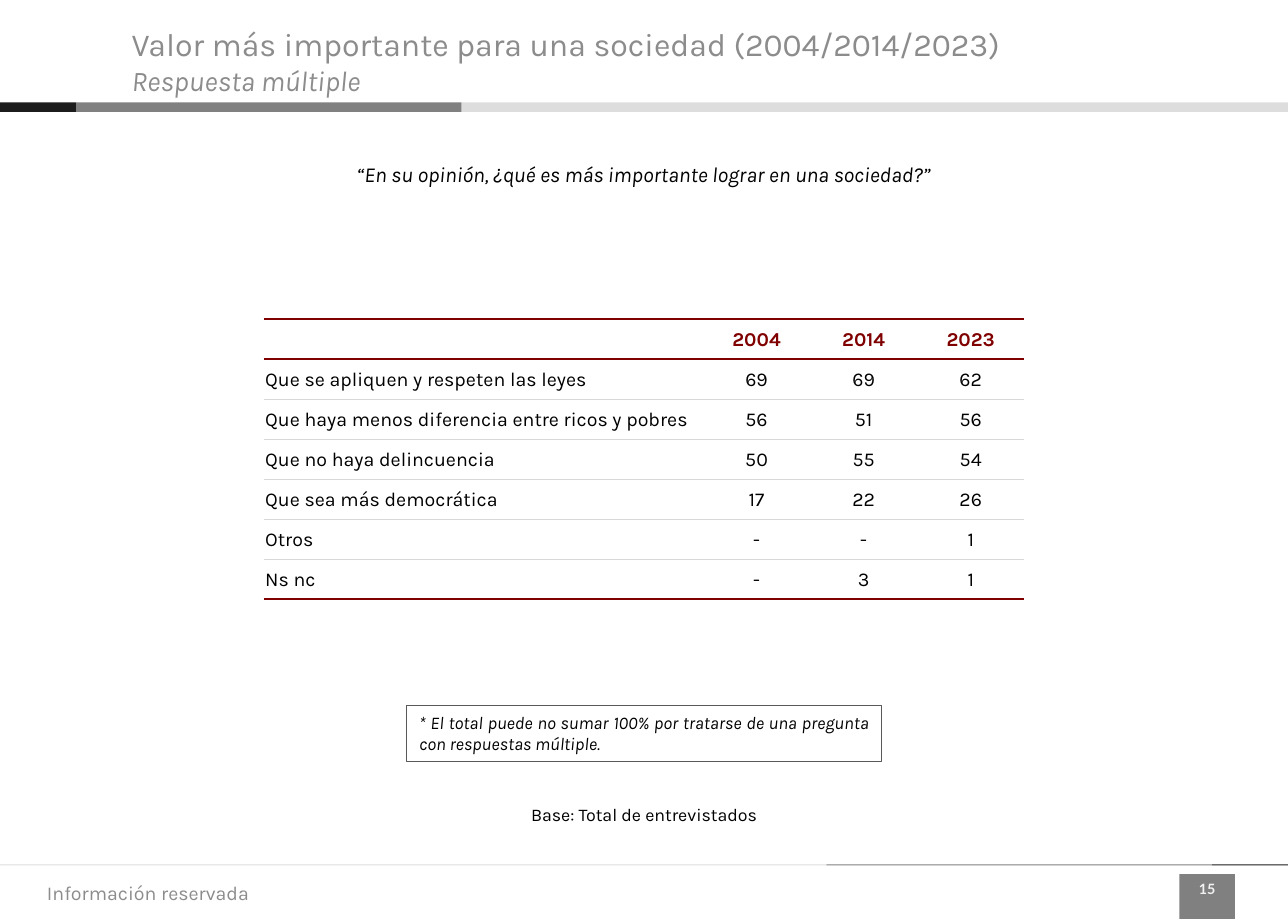
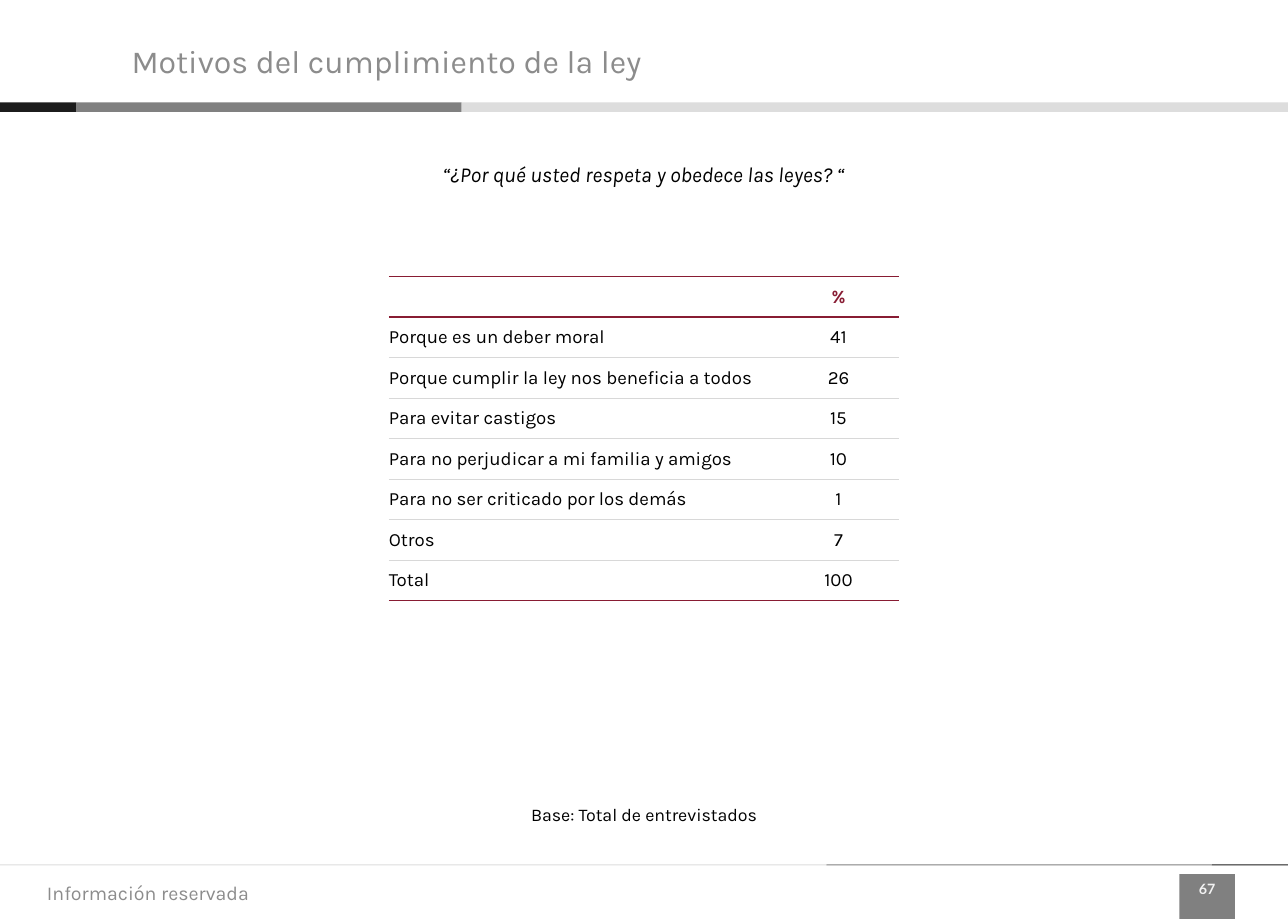
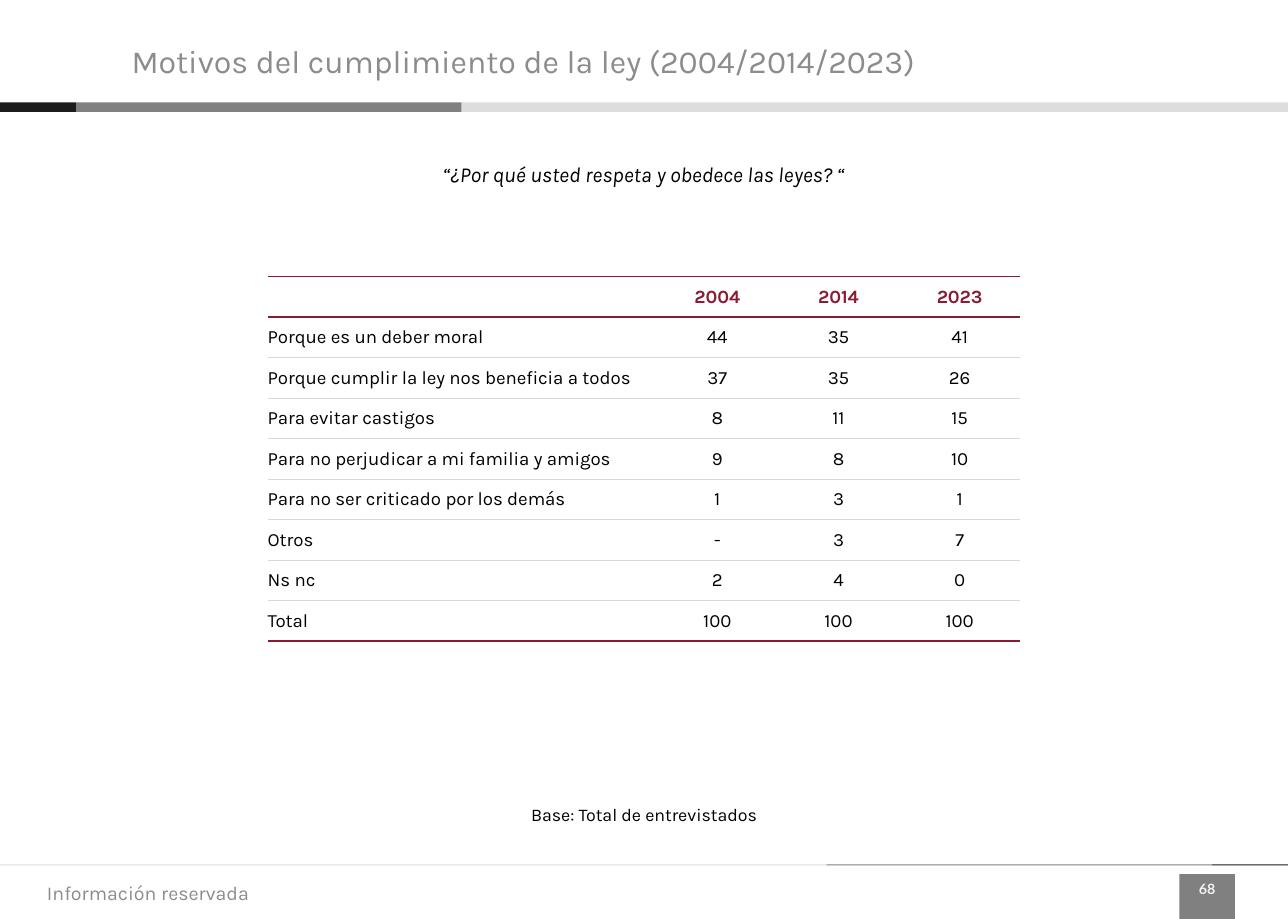
from lxml.etree import SubElement
from pptx import Presentation
from pptx.dml.color import RGBColor
from pptx.enum.shapes import MSO_SHAPE
from pptx.enum.text import MSO_ANCHOR, MSO_AUTO_SIZE, PP_ALIGN
from pptx.oxml.ns import qn
from pptx.util import Cm, Pt

INK = {
    "black": "000000", "dark": "1C1C1C", "mid": "808080", "pale": "DDDDDD",
    "title": "8C8C8C", "page": "F2F2F2", "frame": "595959", "rule": "D8D8D8",
    "red": "800000", "wine": "881C33",
}
WIDE, HIGH = 25.5, 18.2
BANDS = [(1.51, "dark"), (7.63, "mid"), (16.36, "pale")]

PAGES = [
    {
        "page": "15",
        "title": ["Valor más importante para una sociedad (2004/2014/2023)",
                  "Respuesta múltiple"],
        "ask": "“En su opinión, ¿qué es más importante lograr en una sociedad?”",
        "note": "* El total puede no sumar 100% por tratarse de una pregunta "
                "con respuestas múltiple.",
        "top": 6.32, "cols": (8.7, 2.12), "tall": 5.55,
        "size": 11, "tone": "red", "pad": 0.03,
        "rows": [
            ["", "2004", "2014", "2023"],
            ["Que se apliquen y respeten las leyes", "69", "69", "62"],
            ["Que haya menos diferencia entre ricos y pobres", "56", "51", "56"],
            ["Que no haya delincuencia", "50", "55", "54"],
            ["Que sea más democrática", "17", "22", "26"],
            ["Otros", "-", "-", "1"],
            ["Ns nc", "-", "3", "1"],
        ],
    },
    {
        "page": "67",
        "title": ["Motivos del cumplimiento de la ley"],
        "ask": "“¿Por qué usted respeta y obedece las leyes? “",
        "top": 5.48, "cols": (7.7, 2.4), "tall": 6.42,
        "size": 10.5, "tone": "wine", "pad": 0,
        "rows": [
            ["", "%"],
            ["Porque es un deber moral", "41"],
            ["Porque cumplir la ley nos beneficia a todos", "26"],
            ["Para evitar castigos", "15"],
            ["Para no perjudicar a mi familia y amigos", "10"],
            ["Para no ser criticado por los demás", "1"],
            ["Otros", "7"],
            ["Total", "100"],
        ],
    },
    {
        "page": "68",
        "title": ["Motivos del cumplimiento de la ley (2004/2014/2023)"],
        "ask": "“¿Por qué usted respeta y obedece las leyes? “",
        "top": 5.48, "cols": (7.7, 2.4), "tall": 7.22,
        "size": 10.5, "tone": "wine", "pad": 0,
        "rows": [
            ["", "2004", "2014", "2023"],
            ["Porque es un deber moral", "44", "35", "41"],
            ["Porque cumplir la ley nos beneficia a todos", "37", "35", "26"],
            ["Para evitar castigos", "8", "11", "15"],
            ["Para no perjudicar a mi familia y amigos", "9", "8", "10"],
            ["Para no ser criticado por los demás", "1", "3", "1"],
            ["Otros", "-", "3", "7"],
            ["Ns nc", "2", "4", "0"],
            ["Total", "100", "100", "100"],
        ],
    },
]


def write(para, text, size, tone="black", align=PP_ALIGN.CENTER,
          bold=False, italic=False, face="Karla"):
    """Fill one paragraph and set its font."""
    para.text = text
    para.alignment = align
    font = para.font
    font.name, font.size, font.bold, font.italic = face, Pt(size), bold, italic
    font.color.rgb = RGBColor.from_string(INK[tone])


def panel(slide, x, y, w, h, fill=None, line=None):
    """Add a rectangle, lengths in cm; without fill or line it only holds text."""
    shape = slide.shapes.add_shape(MSO_SHAPE.RECTANGLE, Cm(x), Cm(y), Cm(w), Cm(h))
    shape.shadow.inherit = False
    if fill:
        shape.fill.solid()
        shape.fill.fore_color.rgb = RGBColor.from_string(INK[fill])
    else:
        shape.fill.background()
    if line:
        shape.line.color.rgb = RGBColor.from_string(INK[line])
        shape.line.width = Pt(0.75)
    else:
        shape.line.fill.background()
    shape.text_frame.word_wrap = True
    shape.text_frame.vertical_anchor = MSO_ANCHOR.TOP
    return shape


deck = Presentation()
deck.slide_width, deck.slide_height = Cm(WIDE), Cm(HIGH)

for data in PAGES:
    slide = deck.slides.add_slide(deck.slide_layouts[5])

    # Bands, footer and page number
    x = 0
    for w, tone in BANDS:
        panel(slide, x, 2.03, w, 0.19, tone)
        panel(slide, WIDE - x - w, 17.12, w, 0.02, tone)
        x += w
    badge = panel(slide, 23.35, 17.31, 1.1, HIGH - 17.31, "mid")
    write(badge.text_frame.paragraphs[0], data["page"], 8, "page",
          bold=True, face="Lato")
    foot = slide.shapes.add_textbox(Cm(0.68), Cm(17.19), Cm(5.94), Cm(0.96))
    foot.text_frame.word_wrap = True
    foot.text_frame.vertical_anchor = MSO_ANCHOR.MIDDLE
    write(foot.text_frame.paragraphs[0], "Información reservada", 11, "title",
          PP_ALIGN.LEFT)

    # Title
    title = slide.shapes.title
    title.left, title.top = Cm(2.35), Cm(0.5)
    title.width, title.height = Cm(20), Cm(1.4)
    frame = title.text_frame
    frame.auto_size = MSO_AUTO_SIZE.NONE
    frame.vertical_anchor = MSO_ANCHOR.MIDDLE
    for i, text in enumerate(data["title"]):
        para = frame.add_paragraph() if i else frame.paragraphs[0]
        write(para, text, 16 if i else 18, "title", PP_ALIGN.LEFT, italic=i > 0)

    # Question and base, centred on the slide
    for text, y, w, h, size in ((data["ask"], 3.07, 19, 0.77, 12),
                                ("Base: Total de entrevistados", 15.79, 5.3, 0.7, 10)):
        label = slide.shapes.add_textbox(Cm((WIDE - w) / 2), Cm(y), Cm(w), Cm(h))
        label.text_frame.word_wrap = True
        write(label.text_frame.paragraphs[0], text, size, italic=size == 12)

    # Table
    rows = data["rows"]
    count = len(rows)
    first, rest = data["cols"]
    wide = first + rest * (len(rows[0]) - 1)
    table = slide.shapes.add_table(
        count, len(rows[0]), Cm((WIDE - wide) / 2), Cm(data["top"]),
        Cm(wide), Cm(data["tall"])).table
    table.first_row = table.horz_banding = False
    for c, col in enumerate(table.columns):
        col.width = Cm(rest if c else first)
    for r, row in enumerate(rows):
        for c, text in enumerate(row):
            cell = table.cell(r, c)
            cell.margin_left = cell.margin_right = cell.margin_top = Cm(data["pad"])
            cell.margin_bottom = 0
            cell.vertical_anchor = MSO_ANCHOR.MIDDLE
            write(cell.text_frame.paragraphs[0], text, data["size"],
                  "black" if r else data["tone"],
                  PP_ALIGN.CENTER if c else PP_ALIGN.LEFT, bold=r == 0)
            props = cell._tc.get_or_add_tcPr()
            for side in ("lnL", "lnR"):
                SubElement(SubElement(props, qn("a:" + side)), qn("a:noFill"))
            for side, edge in (("lnT", r), ("lnB", r + 1)):
                strong = edge in (0, 1, count)
                line = SubElement(props, qn("a:" + side),
                                  w=str(Pt(1 if strong else 0.5)))
                fill = SubElement(line, qn("a:solidFill"))
                SubElement(fill, qn("a:srgbClr"),
                           val=INK[data["tone"] if strong else "rule"])
            cell.fill.background()

    if "note" in data:
        note = panel(slide, 8.05, 13.97, 9.4, 1.11, line="frame")
        write(note.text_frame.paragraphs[0], data["note"], 10,
              align=PP_ALIGN.JUSTIFY, italic=True)

deck.save("out.pptx")
